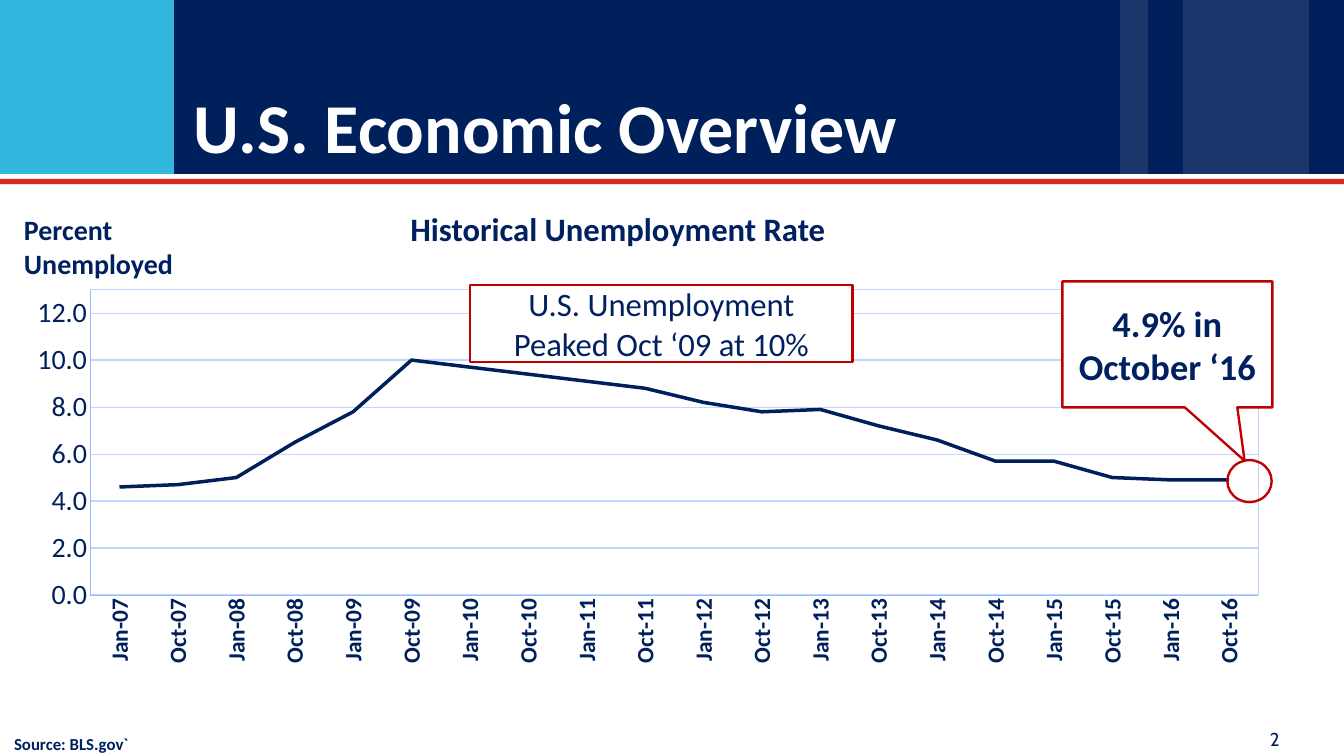
from typing import NamedTuple, Optional

from lxml import etree
from pptx import Presentation
from pptx.chart.data import CategoryChartData
from pptx.dml.color import RGBColor
from pptx.enum import chart as charts, shapes, text
from pptx.oxml import parse_xml
from pptx.oxml.ns import nsdecls, qn
from pptx.util import Pt

NAVY = "00205B"
INK = "002060"
WHITE = "FFFFFF"
RED = "C00000"
GRID = "C0D6FF"
AXIS = "96BBFF"
FONT = "Calibri"

RECTANGLE = shapes.MSO_SHAPE.RECTANGLE
LEFT, CENTER = text.PP_ALIGN.LEFT, text.PP_ALIGN.CENTER
TOP, MIDDLE = text.MSO_ANCHOR.TOP, text.MSO_ANCHOR.MIDDLE

RATES = (4.6, 4.7, 5, 6.5, 7.8, 10, 9.7, 9.4, 9.1, 8.8,
         8.2, 7.8, 7.9, 7.2, 6.6, 5.7, 5.7, 5, 4.9, 4.9)
MONTHS = [f"{month}-{year:02}" for year in range(7, 17) for month in ("Jan", "Oct")]


class Area(NamedTuple):
    left: float
    top: float
    width: float
    height: float

    def lengths(self) -> list:
        return [Pt(value) for value in self]


class Band(NamedTuple):
    area: Area
    color: str
    opacity: int = 100


class Label(NamedTuple):
    area: Area
    words: str
    size: float
    color: str = INK
    bold: bool = True
    font: str = FONT


class Marker(NamedTuple):
    area: Area
    kind: shapes.MSO_SHAPE
    fill: Optional[str] = None
    label: Optional[Label] = None
    adjustments: tuple = ()


BANDS = (
    Band(Area(0, 0, 1152, 149), NAVY),
    Band(Area(0, 0, 149, 149), "32B8DF"),
    Band(Area(1014, 0, 108, 149), WHITE, 10),
    Band(Area(960, 0, 24, 149), WHITE, 10),
    Band(Area(0, 153.4, 1152, 4.4), "DA291C"),
)
CIRCLE_AREA = Area(1052, 394.4, 38, 36)
PEAK_AREA = Area(403, 244.2, 327.8, 66)
LATEST_AREA = Area(910.6, 241.2, 180, 108)
MARKERS = (
    Marker(CIRCLE_AREA, shapes.MSO_SHAPE.OVAL),
    Marker(PEAK_AREA, RECTANGLE, WHITE,
           Label(PEAK_AREA, "U.S. Unemployment Peaked Oct ‘09 at 10%", 28, bold=False)),
    Marker(LATEST_AREA, shapes.MSO_SHAPE.RECTANGULAR_CALLOUT, WHITE,
           Label(LATEST_AREA, "4.9% in October ‘16", 31.2), (0.368, 0.924)),
)
LABELS = (
    Label(Area(13.5, 178.6, 185, 65.5), "Percent Unemployed", 24),
    Label(Area(5, 625, 237.6, 24.5), "Source: BLS.gov`", 14.4),
    Label(Area(344.6, 175.7, 430, 41), "Historical Unemployment Rate", 28),
    Label(Area(1081.4, 620, 80.6, 26.6), "2", 16, NAVY, False, "Cabin"),
)


def rgb(color: str) -> RGBColor:
    return RGBColor.from_string(color)


def style_font(font, size: float, color: str, bold: bool, name: str = FONT) -> None:
    font.name = name
    font.size = Pt(size)
    font.bold = bold
    font.color.rgb = rgb(color)


def write(frame, label: Label, align, anchor) -> None:
    frame.word_wrap = True
    frame.vertical_anchor = anchor
    frame.text = label.words
    para = frame.paragraphs[0]
    para.alignment = align
    style_font(para.font, label.size, label.color, label.bold, label.font)


def add_band(page, band: Band) -> None:
    shape = page.shapes.add_shape(RECTANGLE, *band.area.lengths())
    shape.shadow.inherit = False
    shape.line.fill.background()
    shape.fill.solid()
    shape.fill.fore_color.rgb = rgb(band.color)
    if band.opacity < 100:
        color = shape.element.spPr.find(f"{qn('a:solidFill')}/{qn('a:srgbClr')}")
        etree.SubElement(color, qn("a:alpha")).set("val", str(band.opacity * 1000))


def add_title(page) -> None:
    title = page.shapes.title
    title.left, title.top, title.width, title.height = Area(156, 0, 960, 149.8).lengths()
    frame = title.text_frame
    write(frame, Label(Area(156, 0, 960, 149.8), "U.S. Economic Overview", 60, WHITE),
          LEFT, text.MSO_ANCHOR.BOTTOM)
    frame.auto_size = text.MSO_AUTO_SIZE.NONE
    frame.margin_left = frame.margin_right = Pt(10)
    frame.margin_top = frame.margin_bottom = Pt(5)
    frame.paragraphs[0].line_spacing = 0.9
    # The title has to lie in front of the bands.
    title.element.getparent().append(title.element)


def place_plot(chart) -> None:
    """Fix the inner plot area and outline it."""
    plot_area = chart.element.find(f".//{qn('c:plotArea')}")
    for layout in plot_area.findall(qn("c:layout")):
        plot_area.remove(layout)
    sizes = {"x": 0.047, "y": 0.047, "w": 0.941, "h": 0.747}
    values = "".join(f'<c:{key} val="{value}"/>' for key, value in sizes.items())
    plot_area.insert(0, parse_xml(
        f'<c:layout {nsdecls("c")}><c:manualLayout><c:layoutTarget val="inner"/>'
        f'<c:xMode val="edge"/><c:yMode val="edge"/>{values}</c:manualLayout></c:layout>'))
    plot_area.append(parse_xml(
        f'<c:spPr {nsdecls("c", "a")}><a:noFill/><a:ln w="9525"><a:solidFill>'
        f'<a:srgbClr val="{GRID}"/></a:solidFill></a:ln></c:spPr>'))


def style_line(line, color: str, width: float) -> None:
    line.color.rgb = rgb(color)
    line.width = Pt(width)


def add_rate_chart(page) -> None:
    data = CategoryChartData()
    data.categories = MONTHS
    data.add_series("Unemployment rate", RATES)
    chart = page.shapes.add_chart(charts.XL_CHART_TYPE.LINE,
                                  *Area(27.4, 231.8, 1064, 350.6).lengths(), data).chart
    chart.has_title = chart.has_legend = False
    style_font(chart.font, 12.5, NAVY, True)
    chart.plots[0].vary_by_categories = False
    series = chart.plots[0].series[0]
    series.smooth = False
    series.marker.style = charts.XL_MARKER_STYLE.NONE
    style_line(series.format.line, NAVY, 3)

    months, rates = chart.category_axis, chart.value_axis
    for axis, size, bold in ((months, 20, True), (rates, 24, False)):
        axis.major_tick_mark = axis.minor_tick_mark = charts.XL_TICK_MARK.NONE
        style_font(axis.tick_labels.font, size, NAVY, bold)
        style_line(axis.format.line, AXIS, 0.75)
    months.has_major_gridlines = False
    months.tick_labels.offset = 0
    label_body = months._element.find(f"{qn('c:txPr')}/{qn('a:bodyPr')}")
    label_body.set("rot", "-5400000")
    label_body.set("vert", "horz")
    rates.minimum_scale, rates.maximum_scale, rates.major_unit = 0, 13, 2
    rates.tick_labels.number_format = "#0.0"
    rates.tick_labels.number_format_is_linked = False
    style_line(rates.major_gridlines.format.line, GRID, 1)
    place_plot(chart)


def add_marker(page, marker: Marker) -> None:
    shape = page.shapes.add_shape(marker.kind, *marker.area.lengths())
    shape.shadow.inherit = False
    style_line(shape.line, RED, 2)
    for index, value in enumerate(marker.adjustments):
        shape.adjustments[index] = value
    if marker.fill:
        shape.fill.solid()
        shape.fill.fore_color.rgb = rgb(marker.fill)
    else:
        shape.fill.background()
    if marker.label:
        write(shape.text_frame, marker.label, CENTER, MIDDLE)


def add_label(page, label: Label) -> None:
    box = page.shapes.add_textbox(*label.area.lengths())
    write(box.text_frame, label, LEFT, TOP)


def main() -> None:
    deck = Presentation()
    deck.slide_width, deck.slide_height = Pt(1152), Pt(648)
    page = deck.slides.add_slide(deck.slide_layouts.get_by_name("Title Only"))
    for band in BANDS:
        add_band(page, band)
    add_rate_chart(page)
    add_title(page)
    for marker in MARKERS:
        add_marker(page, marker)
    for label in LABELS:
        add_label(page, label)
    deck.save("out.pptx")


if __name__ == "__main__":
    main()
